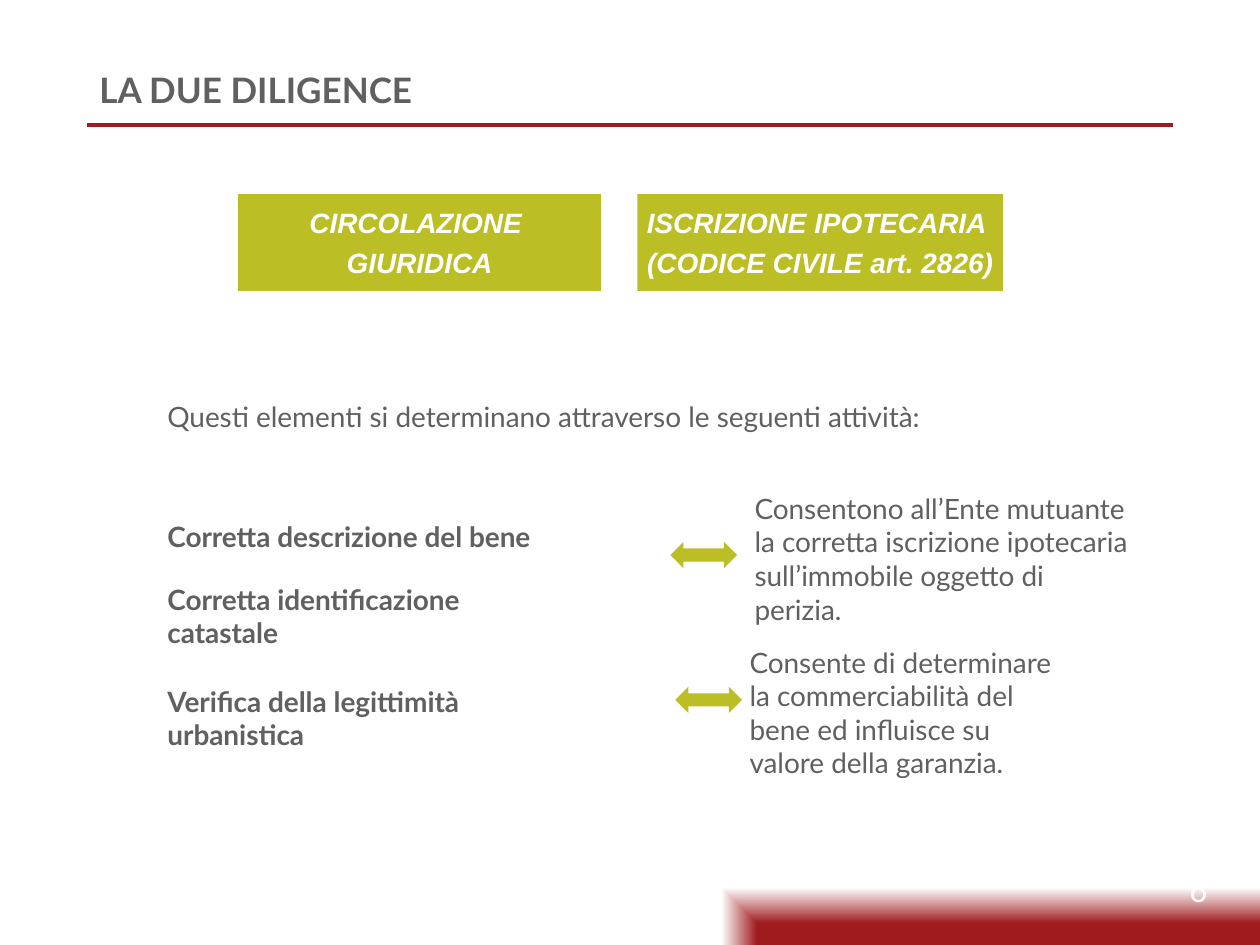
from lxml.etree import SubElement
from pptx import Presentation
from pptx.dml.color import RGBColor
from pptx.enum.shapes import MSO_CONNECTOR, MSO_SHAPE
from pptx.enum.text import MSO_ANCHOR, PP_ALIGN
from pptx.oxml import parse_xml
from pptx.oxml.ns import nsdecls, qn
from pptx.util import Inches, Pt

RED = RGBColor(0x9F, 0x1B, 0x1E)
LIME = RGBColor(0xBB, 0xBE, 0x24)
GRAY = RGBColor(0x60, 0x60, 0x60)
WHITE = RGBColor(0xFF, 0xFF, 0xFF)

BODY = {"name": "Lato", "size": Pt(16), "color": GRAY}
BOLD = {**BODY, "bold": True}
TITLE = {**BOLD, "size": Pt(20)}
HEAD = {"name": "Arial", "size": Pt(16), "color": WHITE,
        "bold": True, "italic": True}
PAGE = {"name": "Calibri", "size": Pt(20), "color": WHITE}

INTRO = "Questi elementi si determinano attraverso le seguenti attività:"
LABELS = [
    (4.07, "Corretta descrizione del bene"),
    (4.57, "Corretta identificazione catastale"),
    (5.38, "Verifica della legittimità urbanistica"),
]
NOTES = [
    ((5.89, 3.85, 3.17, 1.18), "Consentono all’Ente mutuante la corretta "
     "iscrizione ipotecaria sull’immobile oggetto di perizia."),
    ((5.85, 5.07, 2.72, 1.18), "Consente di determinare la commerciabilità "
     "del bene ed influisce su valore della garanzia."),
]
HEADS = [
    (1.89, 2.88, ["CIRCOLAZIONE ", "GIURIDICA"]),
    (5.06, 2.9, ["ISCRIZIONE IPOTECARIA ", "(CODICE CIVILE art. 2826)"]),
]
ARROWS = [(5.32, 4.3), (5.36, 5.45)]


def write(shape, lines, style, align=PP_ALIGN.LEFT, wrap=True,
          anchor=MSO_ANCHOR.TOP, lead=None):
    frame = shape.text_frame
    frame.word_wrap = wrap
    frame.vertical_anchor = anchor
    for i, line in enumerate(lines):
        para = frame.add_paragraph() if i else frame.paragraphs[0]
        para.alignment = align
        para.line_spacing = lead
        if i:
            para.space_before = Pt(3.7)
        font = para.add_run().font
        para.runs[0].text = line
        for key, val in style.items():
            if key == "color":
                font.color.rgb = val
            else:
                setattr(font, key, val)


def add_text(slide, box, text, style, **opts):
    shape = slide.shapes.add_textbox(*map(Inches, box))
    write(shape, [text], style, **opts)


def add_block(slide, kind, box):
    """Add a lime preset shape with no outline or shadow."""
    shape = slide.shapes.add_shape(kind, *map(Inches, box))
    shape.shadow.inherit = False
    shape.fill.solid()
    shape.fill.fore_color.rgb = LIME
    shape.line.fill.background()
    return shape


def add_band(slide):
    """Add the footer band, fading from its lower right corner."""
    band = add_block(slide, MSO_SHAPE.RECTANGLE, (1.45, 6.58, 8.55, 0.93))
    props = band.fill._xPr
    props.replace(props.find(qn("a:solidFill")), parse_xml(
        f'<a:gradFill {nsdecls("a")} rotWithShape="1"><a:gsLst>'
        f'<a:gs pos="39000"><a:srgbClr val="{RED}"/></a:gs>'
        f'<a:gs pos="100000"><a:srgbClr val="{WHITE}"/></a:gs></a:gsLst>'
        '<a:path path="rect"><a:fillToRect l="100000" t="100000"/></a:path>'
        '</a:gradFill>'))


def add_rule(slide):
    ends = map(Inches, (0.69, 0.99, 9.31, 0.99))
    rule = slide.shapes.add_connector(MSO_CONNECTOR.STRAIGHT, *ends)
    rule.line.color.rgb = RED
    rule.line.width = Pt(2.25)
    SubElement(rule._element.spPr, qn("a:effectLst"))


def main():
    deck = Presentation()
    deck.slide_width, deck.slide_height = Inches(10), Inches(7.5)
    slide = deck.slides.add_slide(deck.slide_layouts[6])

    add_band(slide)
    add_rule(slide)
    add_text(slide, (7.43, 6.85, 2.25, 0.4), "6", PAGE,
             align=PP_ALIGN.RIGHT, anchor=MSO_ANCHOR.MIDDLE)
    add_text(slide, (1.23, 3.12, 6.58, 0.37), INTRO, BODY)
    for top, text in LABELS:
        add_text(slide, (1.23, top, 3.15, 0.28), text, BOLD, wrap=False)
    for box, text in NOTES:
        add_text(slide, box, text, BODY)
    for left, width, lines in HEADS:
        block = add_block(slide, MSO_SHAPE.RECTANGLE,
                          (left, 1.54, width, 0.77))
        write(block, lines, HEAD, align=PP_ALIGN.CENTER, wrap=False,
              anchor=MSO_ANCHOR.MIDDLE)
    for spot in ARROWS:
        add_block(slide, MSO_SHAPE.LEFT_RIGHT_ARROW, (*spot, 0.53, 0.21))
    add_text(slide, (0.69, 0.45, 8.62, 0.56), "LA DUE DILIGENCE", TITLE,
             anchor=MSO_ANCHOR.MIDDLE, lead=0.9)

    deck.save("out.pptx")


if __name__ == "__main__":
    main()
